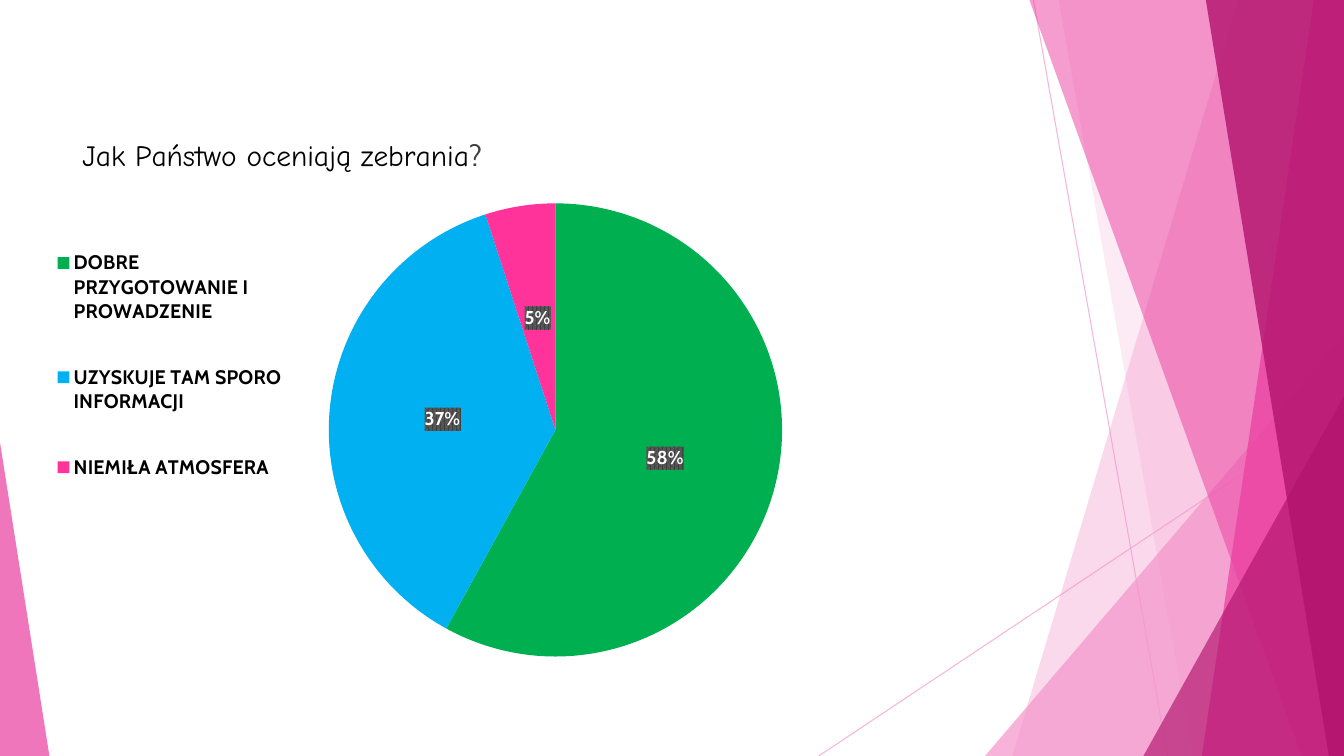
import pptx
import pptx.chart.data
import pptx.dml.color
import pptx.enum.chart
import pptx.enum.shapes
import pptx.oxml
import pptx.oxml.ns
import pptx.util
import lxml.etree

Inches = pptx.util.Inches
Pt = pptx.util.Pt
qn = pptx.oxml.ns.qn

COLORS = {
    "pale": "F496CB", "pink": "EB3D9F", "plum": "B2136D",
    "green": "00B050", "blue": "00B0F0", "rose": "FF3399",
    "black": "000000", "white": "FFFFFF", "gray": "404040", "ash": "595959",
}
LOOKS = {
    "base": {"name": "Cabin", "size": Pt(10)},
    "legend": {"name": "Cabin", "size": Pt(14), "bold": True},
    "label": {"name": "Cabin", "size": Pt(13.3), "bold": True},
    "title": {"name": "Comic Neue", "size": Pt(21), "bold": False},
    "mark": {"name": "Cabin", "size": Pt(21), "bold": False},
}
WIDTH, HEIGHT = 13.33, 7.5

# Lines: start and end
RAYS = [((10.25, 0), (11.58, 7.5)), ((13.33, 4.03), (8.12, 7.5))]
# Facets from back to front: "quad" has top x and foot x, reaching the right edge;
# "tri" has left, width, height and apex, standing on the lower edge
FACETS = [
    ("quad", (12.28, 10.04), "pale", 36),
    ("quad", (10.5, 11.83), "pale", 20),
    ("tri", (9.77, 3.56, 4.17, 1), "pale", 72),
    ("quad", (10.21, 12.91), "pink", 50),
    ("quad", (13.03, 11.92), "pink", 70),
    ("quad", (11.96, 13.18), "plum", 80),
    ("tri", (11.34, 1.99, 3.57, 1), "plum", 66),
    ("tri", (0, 0.49, 3.11, 0), "pink", 70),
]
VOTES = [
    ("DOBRE PRZYGOTOWANIE I PROWADZENIE", 58, "green"),
    ("UZYSKUJE TAM SPORO INFORMACJI", 37, "blue"),
    ("NIEMIŁA ATMOSFERA", 5, "rose"),
]


def tint(form, color, alpha=None):
    """Set a solid colour on a fill, with opacity in percent."""
    form.solid()
    form.fore_color.rgb = pptx.dml.color.RGBColor.from_string(COLORS[color])


def fade(shape, alpha):
    node = shape._element.spPr.find(".//" + qn("a:srgbClr"))
    lxml.etree.SubElement(node, qn("a:alpha"), val=str(alpha * 1000))


def style(font, look, color):
    for key, value in LOOKS[look].items():
        setattr(font, key, value)
    tint(font.fill, color)


def place(node, spot, **at):
    """Put a manual layout, in fractions of the chart, at a child index."""
    for old in node.findall(qn("c:layout")):
        node.remove(old)
    layout = node.makeelement(qn("c:layout"))
    hand = lxml.etree.SubElement(layout, qn("c:manualLayout"))
    if "w" in at and spot == 0:
        lxml.etree.SubElement(hand, qn("c:layoutTarget"), val="inner")
    for key in ("x", "y"):
        lxml.etree.SubElement(hand, qn(f"c:{key}Mode"), val="edge")
    for key, value in at.items():
        lxml.etree.SubElement(hand, qn(f"c:{key}"), val=str(value))
    node.insert(spot, layout)


def draw_rays(slide, box):
    left, top = box[:2]
    for (x1, y1), (x2, y2) in RAYS:
        ray = slide.shapes.add_connector(
            pptx.enum.shapes.MSO_CONNECTOR.STRAIGHT,
            Inches(left + x1), Inches(top + y1), Inches(left + x2), Inches(top + y2))
        ray.line.width = Pt(0.75)
        tint(ray.line.fill, "pale")
        fade(ray, 70)
        lxml.etree.SubElement(ray._element.spPr, qn("a:effectLst"))


def draw_facets(slide, box):
    left, top, width, height = box
    right, foot = left + width, top + height
    for kind, size, color, alpha in FACETS:
        if kind == "quad":
            points = [(left + size[0], top), (right, top), (right, foot), (left + size[1], foot)]
            points = [(Inches(x), Inches(y)) for x, y in points]
            pen = slide.shapes.build_freeform(*points[0])
            pen.add_line_segments(points[1:], close=True)
            facet = pen.convert_to_shape()
        else:
            x, wide, tall, apex = size
            facet = slide.shapes.add_shape(
                pptx.enum.shapes.MSO_SHAPE.ISOSCELES_TRIANGLE,
                Inches(left + x), Inches(foot - tall), Inches(wide), Inches(tall))
            facet.adjustments[0] = apex
        facet.shadow.inherit = False
        facet.line.fill.background()
        tint(facet.fill, color)
        fade(facet, alpha)


def draw_labels(series):
    labels = series.data_labels
    style(labels.font, "label", "white")
    for key, value in {"show_percentage": True, "show_value": False,
                       "number_format": "0%", "number_format_is_linked": False,
                       "position": pptx.enum.chart.XL_LABEL_POSITION.CENTER}.items():
        setattr(labels, key, value)
    # Dark patterned plate behind each label
    text = labels._element.find(qn("c:txPr"))
    plate = text.makeelement(qn("c:spPr"))
    text.addprevious(plate)
    weave = lxml.etree.SubElement(plate, qn("a:pattFill"), prst="pct75")
    for tag, color in (("a:fgClr", "gray"), ("a:bgClr", "ash")):
        ink = lxml.etree.SubElement(weave, qn(tag))
        lxml.etree.SubElement(ink, qn("a:srgbClr"), val=COLORS[color])


def draw_pie(slide, box):
    data = pptx.chart.data.CategoryChartData()
    data.categories = [name for name, _, _ in VOTES]
    data.add_series("Series 1", [count for _, count, _ in VOTES])
    chart = slide.shapes.add_chart(
        pptx.enum.chart.XL_CHART_TYPE.PIE, *map(Inches, box), data).chart
    style(chart.font, "base", "black")

    # Slices
    plot = chart.plots[0]
    plot.vary_by_categories = False
    series = plot.series[0]
    for index, (_, _, color) in enumerate(VOTES):
        slice_form = series.points[index].format
        tint(slice_form.fill, color)
        slice_form.line.fill.background()
    draw_labels(series)
    place(chart._chartSpace.chart.plotArea, 0, x=0.03, y=0.14, w=0.97, h=0.77)

    # Title
    chart.has_title = True
    title = chart.chart_title
    line = title.text_frame.paragraphs[0]
    for text, look, color in (("Jak Państwo oceniają zebrania", "title", "black"),
                              ("?", "mark", "gray")):
        run = line.add_run()
        run.text = text
        style(run.font, look, color)
    place(title._element, 1, x=0.04, y=0.02)

    # Legend
    chart.has_legend = True
    legend = chart.legend
    legend.position = pptx.enum.chart.XL_LEGEND_POSITION.RIGHT
    legend.include_in_layout = False
    style(legend.font, "legend", "black")
    place(legend._element, 1, x=0.01, y=0.15, w=0.24, h=0.53)


def main():
    deck = pptx.Presentation()
    deck.slide_width, deck.slide_height = Inches(WIDTH), Inches(HEIGHT)
    slide = deck.slides.add_slide(deck.slide_layouts[6])
    tint(slide.background.fill, "white")
    page = (0, 0, WIDTH, HEIGHT)
    draw_rays(slide, page)
    draw_facets(slide, page)
    draw_pie(slide, (0.39, 1.2, 9.94, 5.84))
    deck.save("out.pptx")


if __name__ == "__main__":
    main()
